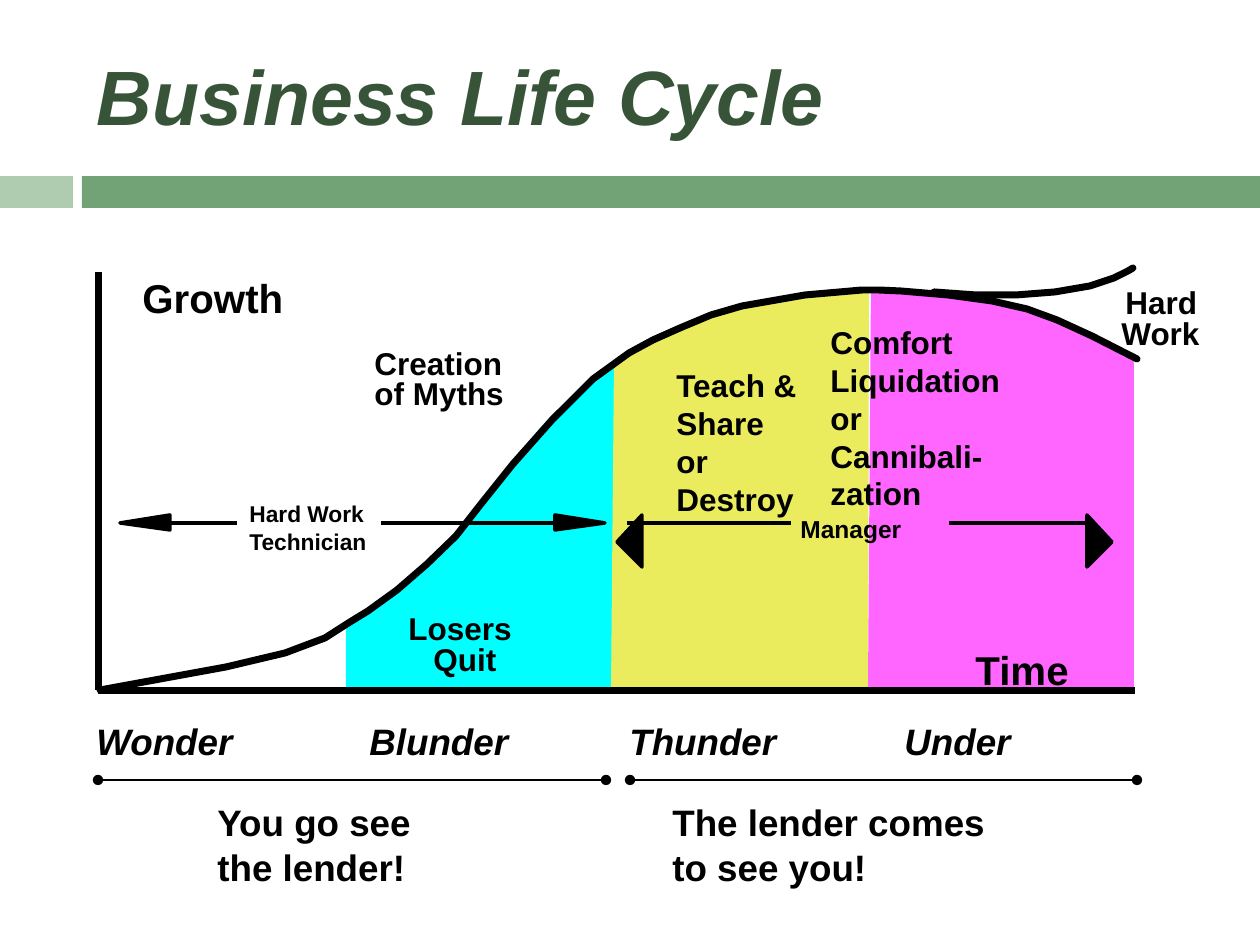
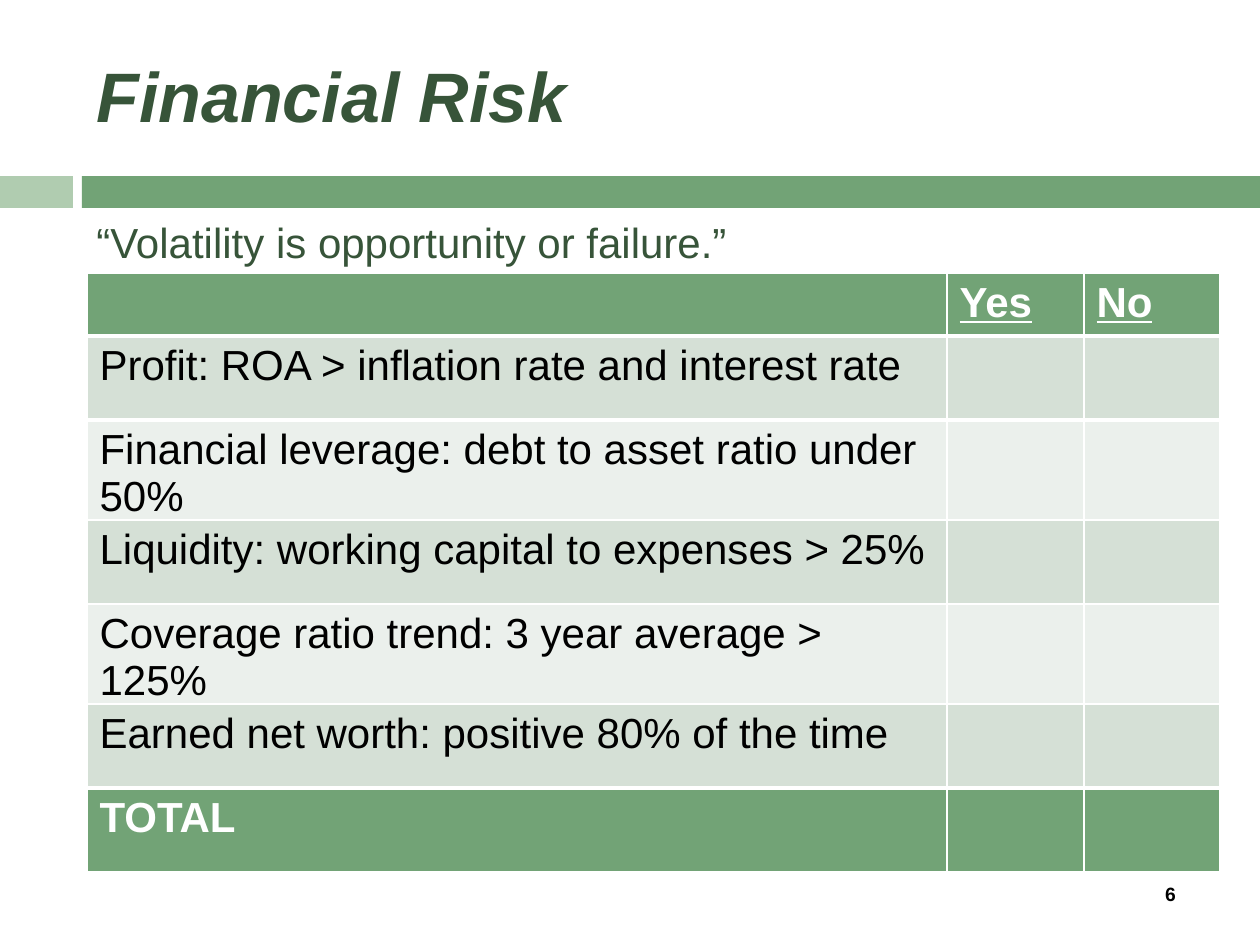
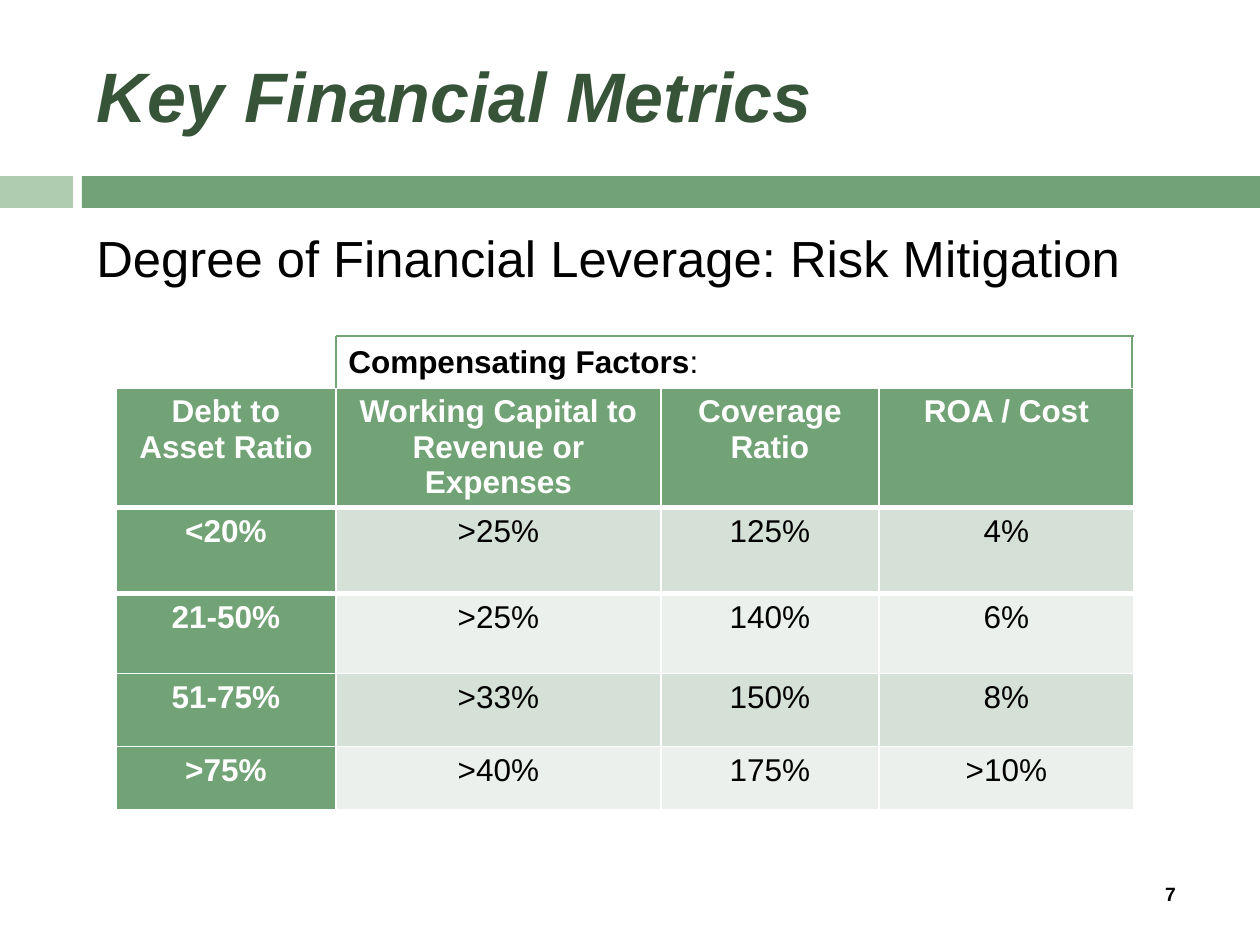
import pptx
import pptx.util
import pptx.dml.color
import pptx.enum.shapes
import pptx.enum.text
import pptx.oxml
from lxml import etree

RGB = pptx.dml.color.RGBColor
ALIGN = pptx.enum.text.PP_ALIGN
ANCHOR = pptx.enum.text.MSO_ANCHOR
RECTANGLE = pptx.enum.shapes.MSO_SHAPE.RECTANGLE

WHITE = RGB(0xFF, 0xFF, 0xFF)
BLACK = RGB(0x00, 0x00, 0x00)
DARK_GREEN = RGB(0x37, 0x54, 0x39)
GREEN = RGB(0x72, 0xA3, 0x76)
PALE_GREEN = RGB(0xB0, 0xCC, 0xB0)
ROW_TINTS = (RGB(0xD5, 0xE0, 0xD6), RGB(0xEB, 0xF0, 0xEC))
CYAN = RGB(0x00, 0xFF, 0xFF)
YELLOW = RGB(0xEA, 0xEC, 0x5E)
PINK = RGB(0xFF, 0x66, 0xFF)

FONT = "Arial"
PX = 914400 / 126
BANDS = [((0, 176, 73, 32), PALE_GREEN), ((82, 176, 1178, 32), GREEN)]
TITLE_BOX = (84, 21, 1124, 147)
PAGE_NUMBER_BOX = (1134, 877, 73, 34)

STAGE_AREAS = [
    (CYAN, [(346, 690), (346, 627), (418, 575), (480, 507), (541, 427), (616, 364), (624, 690)]),
    (YELLOW, [(611, 690), (614, 363), (655, 338), (727, 311), (793, 296), (869, 291), (868, 690)]),
    (PINK, [(868, 691), (871, 289), (939, 294), (1014, 306), (1066, 325), (1134, 359), (1134, 691)]),
]
GROWTH_CURVE = [
    (100, 690), (226, 667), (285, 653), (325, 638), (350, 622), (368, 611), (397, 590),
    (427, 564), (456, 536), (481, 504), (513, 464), (552, 420), (593, 379), (629, 353),
    (653, 340), (680, 328), (711, 315), (742, 306), (805, 295), (862, 290), (879, 290),
    (901, 291), (948, 295), (992, 301), (1027, 309), (1057, 320), (1092, 336), (1137, 359),
]
RECOVERY_CURVE = [(934, 292), (976, 295), (1016, 295), (1055, 292), (1090, 286),
                  (1114, 278), (1128, 271), (1133, 268)]
AXES = [(1135, 691, 98, 691), (99, 690, 99, 272)]
ROLE_LINES = [(134, 523, 592, 523), (949, 523, 1087, 523), (627, 523, 791, 523)]
ROLE_ARROWHEADS = [
    [(555, 515), (605, 523), (555, 530)],
    [(170, 530), (120, 523), (170, 515)],
    [(1087, 515), (1112, 542), (1087, 567)],
    [(642, 515), (617, 542), (642, 567)],
]
LENDER_SPANS = [(98, 780, 606, 780), (630, 780, 1137, 780)]
TECHNICIAN = ("Hard Work\nTechnician", (237, 494, 144, 68), 13)
CYCLE_LABELS = [
    ("Growth", (130, 267, 168, 62), 23),
    ("Time", (963, 639, 120, 62), 23),
    ("Hard", (1113, 277, 98, 50), 18),
    ("Work", (1109, 308, 105, 50), 18),
    ("Creation", (362, 338, 155, 50), 18),
    ("of Myths", (362, 368, 156, 50), 18),
    ("Teach &\nShare\nor\nDestroy", (664, 360, 146, 165), 18),
    ("Losers", (396, 603, 130, 50), 18),
    ("Quit", (421, 634, 89, 50), 18),
    ("Manager", (788, 508, 126, 42), 14),
]
CYCLE_NOTES = [
    ("Comfort\vLiquidation\vor\vCannibali-\nzation", (818, 317, 367, 203), 18),
    ("You go see\vthe lender!", (205, 794, 260, 101), 21),
    ("The lender comes\vto see you!", (660, 794, 380, 101), 21),
]
STAGES = [
    ("Wonder", (84, 713, 163, 57)),
    ("Blunder", (357, 713, 165, 57)),
    ("Thunder", (617, 713, 174, 57)),
    ("Under", (892, 713, 132, 57)),
]

RISK_QUOTE = ("“Volatility is opportunity or failure.”", (84, 210, 1134, 63), 24)
RISK_CHECKLIST = [
    ("", "Yes", "No"),
    ("Profit: ROA > inflation rate and interest rate", "", ""),
    ("Financial leverage: debt to asset ratio under 50%", "", ""),
    ("Liquidity: working capital to expenses > 25%", "", ""),
    ("Coverage ratio trend: 3 year average > 125%", "", ""),
    ("Earned net worth: positive 80% of the time", "", ""),
    ("TOTAL", "", ""),
]
RISK_COLUMNS = (860, 137, 136)
RISK_ROWS = (63,) + (84,) * 6

LEVERAGE_HEADING = ("Degree of Financial Leverage: Risk Mitigation", (84, 221, 1124, 73), 29)
FACTORS_HEADING = ("Compensating Factors", (336, 336, 777, 53), 18)
FACTORS_FRAME = [(336, 388, 336, 336), (1132, 388, 1132, 336), (336, 336, 1134, 336)]
LEVERAGE_METRICS = [
    ("Debt to Asset Ratio", "Working Capital to Revenue or Expenses", "Coverage Ratio", "ROA / Cost"),
    ("<20%", ">25%", "125%", "4%"),
    ("21-50%", ">25%", "140%", "6%"),
    ("51-75%", ">33%", "150%", "8%"),
    (">75%", ">40%", "175%", ">10%"),
]
LEVERAGE_COLUMNS = (220, 325, 218, 255)
LEVERAGE_ROWS = (84, 86, 80, 73, 63)


def emu(box):
    return [round(length * PX) for length in box]


def style(paragraph, size, color=BLACK, bold=True, italic=False, align=ALIGN.LEFT):
    font = paragraph.font
    font.name, font.size, font.color.rgb = FONT, pptx.util.Pt(size), color
    font.bold, font.italic = bold, italic
    paragraph.alignment = align


def write(shape, text, size, wrap=False, anchor=ANCHOR.TOP, **looks):
    frame = shape.text_frame
    frame.text = text
    frame.word_wrap = wrap
    frame.vertical_anchor = anchor
    for paragraph in frame.paragraphs:
        style(paragraph, size, **looks)
    return shape


def label(slide, text, box, size, **looks):
    return write(slide.shapes.add_textbox(*emu(box)), text, size, **looks)


def rectangle(slide, box, color):
    shape = slide.shapes.add_shape(RECTANGLE, *emu(box))
    shape.shadow.inherit = False
    shape.fill.solid()
    shape.fill.fore_color.rgb = color
    shape.line.fill.background()
    return shape


def outline(slide, points, fill=None, weight=None):
    builder = slide.shapes.build_freeform(*points[0], scale=PX)
    builder.add_line_segments(points[1:], close=fill is not None)
    shape = builder.convert_to_shape()
    shape.shadow.inherit = False
    if fill is None:
        shape.fill.background()
    else:
        shape.fill.solid()
        shape.fill.fore_color.rgb = fill
    if weight is None:
        shape.line.fill.background()
    else:
        shape.line.color.rgb = BLACK
        shape.line.width = pptx.util.Pt(weight)
        shape.line._get_or_add_ln().set("cap", "rnd")


def line(slide, ends, weight, color=BLACK, dots=False):
    connector = slide.shapes.add_connector(pptx.enum.shapes.MSO_CONNECTOR.STRAIGHT, *emu(ends))
    connector.line.color.rgb = color
    connector.line.width = pptx.util.Pt(weight)
    if dots:
        for end in ("a:headEnd", "a:tailEnd"):
            etree.SubElement(connector.line._get_or_add_ln(), pptx.oxml.ns.qn(end), type="oval")
    etree.SubElement(connector._element.spPr, pptx.oxml.ns.qn("a:effectLst"))


def thick_edge(cell, side):
    edge = etree.Element(pptx.oxml.ns.qn(side), w=str(pptx.util.Pt(3)))
    fill = etree.SubElement(edge, pptx.oxml.ns.qn("a:solidFill"))
    etree.SubElement(fill, pptx.oxml.ns.qn("a:srgbClr"), val=str(WHITE))
    cell._tc.get_or_add_tcPr().insert(0, edge)


def table(slide, corner, columns, rows, content, size, align=ALIGN.LEFT,
          total_row=False, row_heads=False):
    box = (*corner, sum(columns), sum(rows))
    grid = slide.shapes.add_table(len(rows), len(columns), *emu(box)).table
    grid.last_row, grid.first_col = total_row, row_heads
    for column, width in zip(grid.columns, emu(columns)):
        column.width = width
    for row, height in zip(grid.rows, emu(rows)):
        row.height = height
    total = len(rows) - 1 if total_row else None
    for r, texts in enumerate(content):
        for c, text in enumerate(texts):
            strong = r in (0, total) or (row_heads and c == 0)
            cell = grid.cell(r, c)
            cell.margin_bottom = 0
            cell.fill.solid()
            cell.fill.fore_color.rgb = GREEN if strong else ROW_TINTS[(r - 1) % 2]
            if r in (1, total):
                thick_edge(cell, "a:lnT")
            if r == 0 or r + 1 == total:
                thick_edge(cell, "a:lnB")
            if text:
                cell.text = text
                style(cell.text_frame.paragraphs[0], size, WHITE if strong else BLACK,
                      bold=strong, align=align)
    return grid


def new_slide(deck, title, title_size):
    slide = deck.slides.add_slide(deck.slide_layouts[5])
    for box, color in BANDS:
        rectangle(slide, box, color)
    heading = slide.shapes.title
    heading.left, heading.top, heading.width, heading.height = emu(TITLE_BOX)
    write(heading, title, title_size, wrap=True, anchor=ANCHOR.MIDDLE, color=DARK_GREEN, italic=True)
    return slide


def number_page(slide, number):
    label(slide, number, PAGE_NUMBER_BOX, 11, wrap=True, anchor=ANCHOR.MIDDLE, align=ALIGN.CENTER)


def life_cycle(deck):
    slide = new_slide(deck, "Business Life Cycle", 44)
    for color, points in STAGE_AREAS:
        outline(slide, points, fill=color)
    for ends in AXES:
        line(slide, ends, 4)
    outline(slide, RECOVERY_CURVE, weight=4)
    for ends in ROLE_LINES:
        line(slide, ends, 2)
    for points in ROLE_ARROWHEADS:
        outline(slide, points, fill=BLACK, weight=2)
    outline(slide, GROWTH_CURVE, weight=4)
    text, box, size = TECHNICIAN
    write(rectangle(slide, box, WHITE), text, size)
    for text, box, size in CYCLE_LABELS:
        label(slide, text, box, size)
    for text, box, size in CYCLE_NOTES:
        label(slide, text, box, size, wrap=True)
    for stage, box in STAGES:
        label(slide, stage, box, 21, italic=True)
    for ends in LENDER_SPANS:
        line(slide, ends, 1, dots=True)


def financial_risk(deck):
    slide = new_slide(deck, "Financial Risk", 40)
    checklist = table(slide, (87, 273), RISK_COLUMNS, RISK_ROWS, RISK_CHECKLIST, 24, total_row=True)
    for answer in (1, 2):
        checklist.cell(0, answer).text_frame.paragraphs[0].font.underline = True
    number_page(slide, "6")
    label(slide, *RISK_QUOTE, wrap=True, color=DARK_GREEN, bold=False)


def key_metrics(deck):
    slide = new_slide(deck, "Key Financial Metrics", 40)
    heading = label(slide, *LEVERAGE_HEADING, wrap=True, bold=False)
    heading.text_frame.paragraphs[0].space_before = pptx.util.Pt(7)
    number_page(slide, "7")
    table(slide, (116, 388), LEVERAGE_COLUMNS, LEVERAGE_ROWS, LEVERAGE_METRICS, 18,
          align=ALIGN.CENTER, row_heads=True)
    factors = label(slide, *FACTORS_HEADING, wrap=True)
    colon = factors.text_frame.paragraphs[0].add_run()
    colon.text = ":"
    colon.font.bold = False
    for ends in FACTORS_FRAME:
        line(slide, ends, 1.5, color=GREEN)


def main():
    deck = pptx.Presentation()
    deck.slide_width, deck.slide_height = emu((1260, 945))
    life_cycle(deck)
    financial_risk(deck)
    key_metrics(deck)
    deck.save("out.pptx")


if __name__ == "__main__":
    main()
